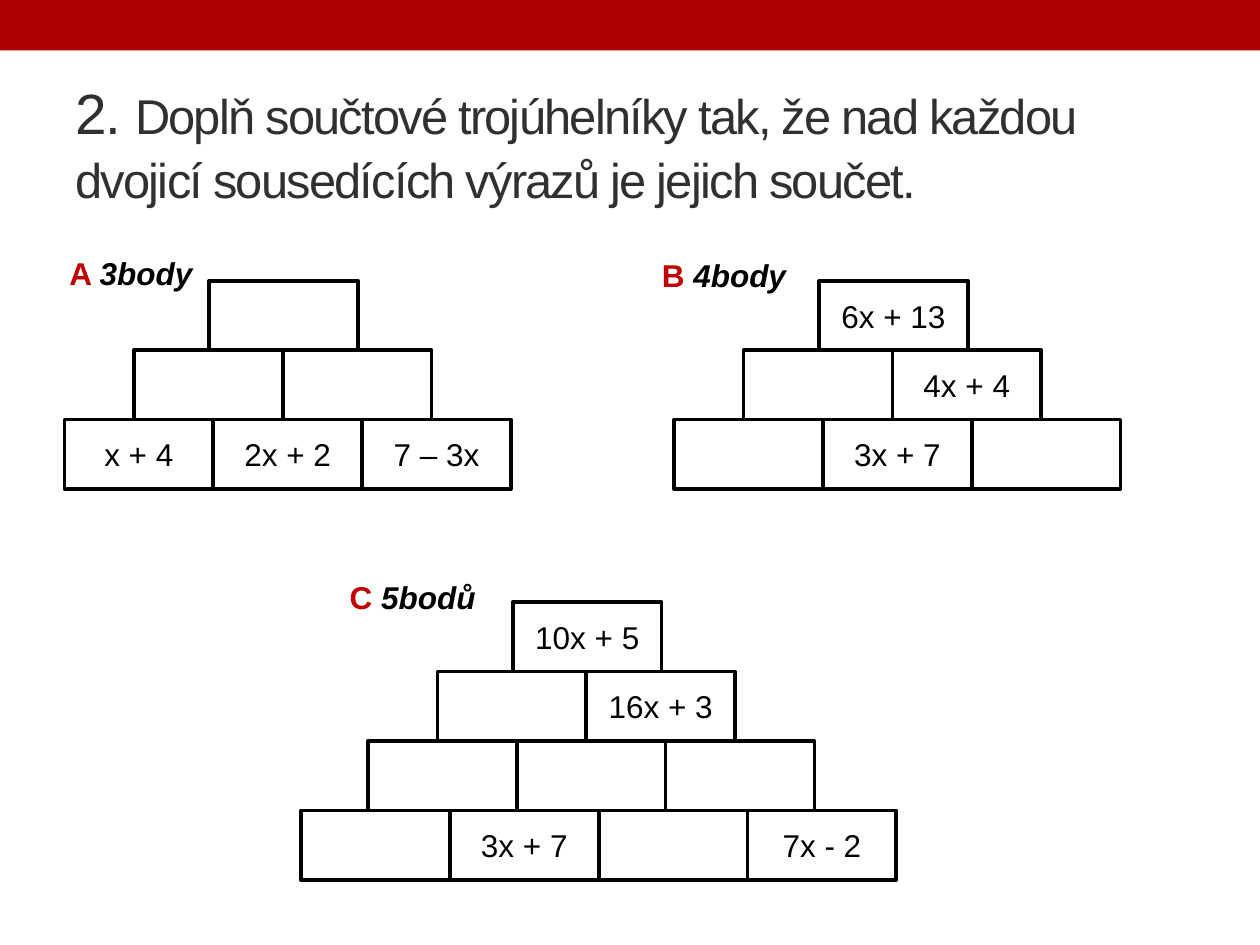
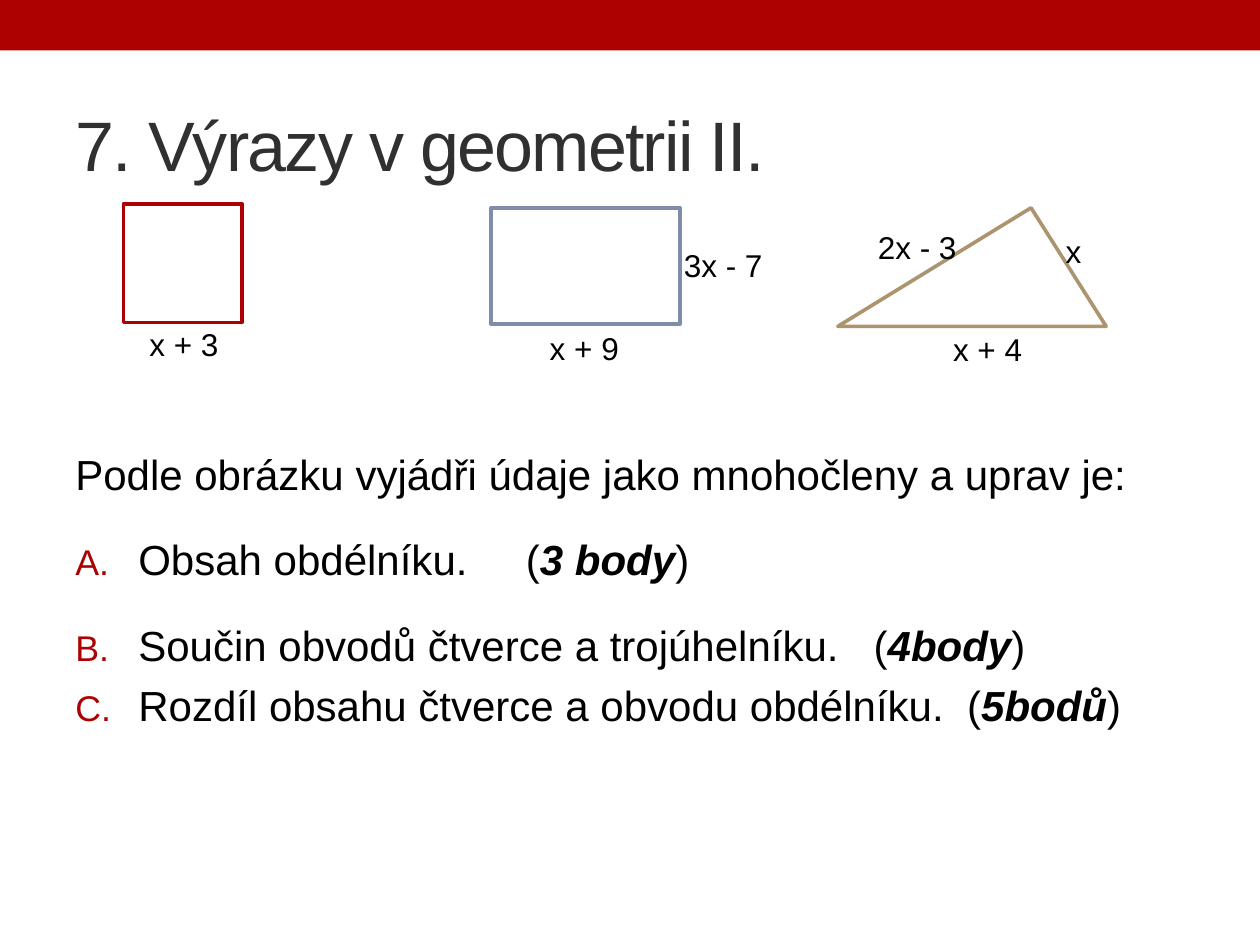
"""Build two Czech algebra slides: addition pyramids and expressions in geometry."""
from dataclasses import dataclass

from lxml.etree import SubElement
from pptx import Presentation
from pptx.dml.color import RGBColor
from pptx.enum.shapes import MSO_SHAPE as Preset
from pptx.enum.text import MSO_ANCHOR as Anchor, MSO_AUTO_SIZE as AutoSize, PP_ALIGN as Align
from pptx.oxml.ns import qn
from pptx.util import Cm, Pt


@dataclass(frozen=True)
class Theme:
    """Colours, type sizes and line width shared by the slides."""
    font: str = "Arial"
    red: str = "AD0101"
    label_red: str = "C00000"
    blue: str = "808DA9"
    tan: str = "AC956E"
    title: str = "303030"
    black: str = "000000"
    white: str = "FFFFFF"
    title_size: float = 40
    number_size: float = 32.4
    task_size: float = 27.9
    body_size: float = 24
    label_size: float = 18
    line_width: float = 2.08


THEME = Theme()
SLIDE_SIZE = (25.4, 19.05)
BAND = (0, 0, 25.4, 1.02)
TITLE_BOX = (1.27, 1.47, 22.86, 2.74)
BODY_BOX = (1.27, 8.92, 22.86, 9.07)

PYRAMID_TITLE = [
    ("2. ", THEME.number_size),
    ("Doplň součtové trojúhelníky tak, že nad každou dvojicí sousedících výrazů "
     "je jejich součet.", THEME.task_size),
]
GEOMETRY_TITLE = [("7. Výrazy v geometrii II.", THEME.title_size)]

BRICK_WIDTH, BRICK_HEIGHT = 3, 1.4
ROW_SHIFTS = (0, 1.52, 2.92, 4.27)
PYRAMIDS = [
    {"letter": "A ", "points": "3body", "label": (0.99, 4.8, 3.3, 1.4), "top": (4.22, 5.66),
     "rows": [[""], ["", ""], ["x + 4", "2x + 2", "7 – 3x"]]},
    {"letter": "B ", "points": "4body", "label": (12.6, 4.85, 3.99, 1.4), "top": (16.51, 5.66),
     "rows": [["6x + 13"], ["", "4x + 4"], ["", "3x + 7", ""]]},
    {"letter": "C ", "points": "5bodů", "label": (6.73, 11.33, 3.18, 1.4), "top": (10.34, 12.14),
     "rows": [["10x + 5"], ["", "16x + 3"], ["", "", ""], ["", "3x + 7", "", "7x - 2"]]},
]

FIGURES = [
    (Preset.RECTANGLE, (2.49, 4.11, 2.39, 2.39), THEME.red),
    (Preset.RECTANGLE, (9.9, 4.19, 3.81, 2.34), THEME.blue),
    (Preset.ISOSCELES_TRIANGLE, (16.89, 4.19, 5.41, 2.39), THEME.tan),
]
TRIANGLE_APEX = 0.72
SIDE_LABEL_SIZE = (2.84, 0.71)
SIDE_LABELS = [
    ("x + 3", 2.29, 6.58), ("x + 9", 10.36, 6.65), ("3x - 7", 13.16, 4.98),
    ("x", 20.22, 4.7), ("x + 4", 18.49, 6.68), ("2x - 3", 17.07, 4.62),
]

INTRO = "Podle obrázku vyjádři údaje jako mnohočleny a uprav je:"
TASKS = [
    ("Obsah obdélníku.", "3 body", 26.7, 1.5),
    ("Součin obvodů čtverce a trojúhelníku.", "4body", 13.3, 1.5),
    ("Rozdíl obsahu čtverce a obvodu obdélníku.", "5bodů", 6.7, 1),
]


def box(left, top, width, height):
    return Cm(left), Cm(top), Cm(width), Cm(height)


def add_run(paragraph, text, size, color=THEME.black, bold=False, italic=False, spacing=None):
    run = paragraph.add_run()
    run.text = text
    font = run.font
    font.name, font.size, font.bold, font.italic = THEME.font, Pt(size), bold, italic
    font.color.rgb = RGBColor.from_string(color)
    if spacing is not None:
        run._r.get_or_add_rPr().set("spc", str(round(spacing * 100)))


def add_figure(shapes, preset, bounds, line=None, fill=THEME.white):
    shape = shapes.add_shape(preset, *box(*bounds))
    shape.shadow.inherit = False
    shape.fill.solid()
    shape.fill.fore_color.rgb = RGBColor.from_string(fill)
    if line:
        shape.line.color.rgb = RGBColor.from_string(line)
        shape.line.width = Pt(THEME.line_width)
    else:
        shape.line.fill.background()
    return shape


def add_text_box(slide, bounds, anchor=Anchor.MIDDLE):
    frame = slide.shapes.add_textbox(*box(*bounds)).text_frame
    frame.word_wrap = True
    frame.vertical_anchor = anchor
    return frame


def add_label(slide, bounds):
    paragraph = add_text_box(slide, bounds).paragraphs[0]
    paragraph.alignment = Align.CENTER
    return paragraph


def add_slide(presentation, title_runs):
    slide = presentation.slides.add_slide(presentation.slide_layouts[5])
    add_figure(slide.shapes, Preset.RECTANGLE, BAND, fill=THEME.red)
    title = slide.shapes.title
    title.left, title.top, title.width, title.height = box(*TITLE_BOX)
    frame = title.text_frame
    frame.word_wrap = True
    frame.auto_size = AutoSize.NONE
    frame.vertical_anchor = Anchor.MIDDLE
    paragraph = frame.paragraphs[0]
    paragraph.alignment = Align.LEFT
    paragraph.line_spacing = 1.07
    for text, size in title_runs:
        add_run(paragraph, text, size, THEME.title, spacing=-1)
    return slide


def add_pyramid(slide, pyramid):
    group = slide.shapes.add_group_shape()
    left, top = pyramid["top"]
    levels = list(enumerate(zip(pyramid["rows"], ROW_SHIFTS)))
    for level, (expressions, shift) in reversed(levels):
        for column, expression in enumerate(expressions):
            bounds = (left - shift + column * BRICK_WIDTH, top + level * BRICK_HEIGHT,
                      BRICK_WIDTH, BRICK_HEIGHT)
            brick = add_figure(group.shapes, Preset.RECTANGLE, bounds, THEME.black)
            if expression:
                paragraph = brick.text_frame.paragraphs[0]
                paragraph.alignment = Align.CENTER
                add_run(paragraph, expression, THEME.label_size)
    label = add_label(slide, pyramid["label"])
    add_run(label, pyramid["letter"], THEME.label_size, THEME.label_red, bold=True)
    add_run(label, pyramid["points"], THEME.label_size, bold=True, italic=True)


def letter_bullet(paragraph):
    properties = paragraph._p.get_or_add_pPr()
    properties.set("marL", str(Cm(1.27)))
    properties.set("indent", str(-Cm(1.27)))
    color = SubElement(properties, qn("a:buClr"))
    SubElement(color, qn("a:srgbClr"), val=THEME.red)
    SubElement(properties, qn("a:buSzPct"), val="85000")
    SubElement(properties, qn("a:buFont"), typeface=THEME.font)
    SubElement(properties, qn("a:buAutoNum"), type="alphaUcPeriod")


def add_tasks(slide):
    frame = add_text_box(slide, BODY_BOX, Anchor.TOP)
    intro = frame.paragraphs[0]
    intro.space_before = Pt(5)
    add_run(intro, INTRO, THEME.body_size)
    for task, points, gap, line_spacing in TASKS:
        paragraph = frame.add_paragraph()
        paragraph.line_spacing = line_spacing
        paragraph.space_before = Pt(5.5)
        letter_bullet(paragraph)
        add_run(paragraph, task, THEME.body_size)
        add_run(paragraph, " ", THEME.body_size, spacing=gap)
        add_run(paragraph, "(", THEME.body_size)
        add_run(paragraph, points, THEME.body_size, bold=True, italic=True)
        add_run(paragraph, ")", THEME.body_size)


def build_pyramid_slide(presentation):
    slide = add_slide(presentation, PYRAMID_TITLE)
    for pyramid in PYRAMIDS:
        add_pyramid(slide, pyramid)


def build_geometry_slide(presentation):
    slide = add_slide(presentation, GEOMETRY_TITLE)
    add_tasks(slide)
    for preset, bounds, color in FIGURES:
        shape = add_figure(slide.shapes, preset, bounds, color)
        if preset == Preset.ISOSCELES_TRIANGLE:
            shape.adjustments[0] = TRIANGLE_APEX
    for text, left, top in SIDE_LABELS:
        add_run(add_label(slide, (left, top, *SIDE_LABEL_SIZE)), text, THEME.label_size)


def main():
    presentation = Presentation()
    presentation.slide_width, presentation.slide_height = map(Cm, SLIDE_SIZE)
    build_pyramid_slide(presentation)
    build_geometry_slide(presentation)
    presentation.save("out.pptx")


if __name__ == "__main__":
    main()
